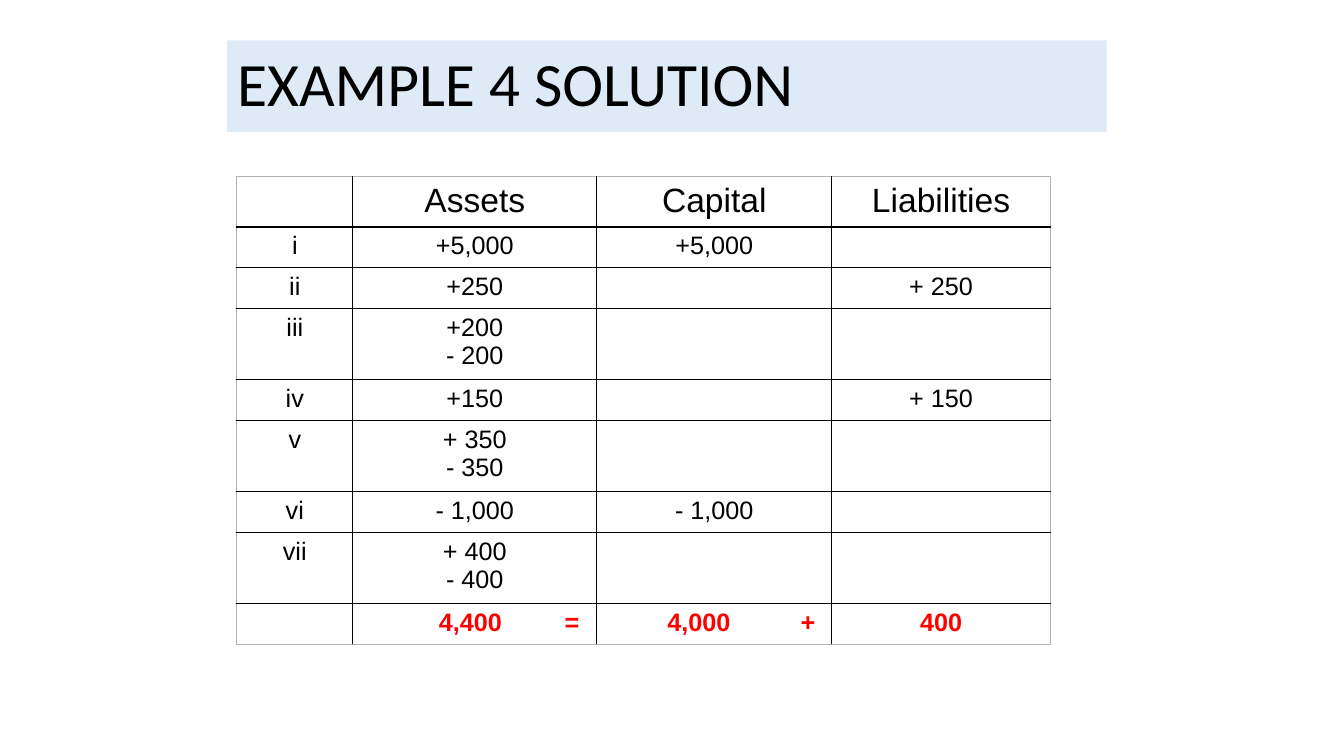
import pptx
import pptx.dml.color
import pptx.enum.text
import pptx.oxml
import pptx.oxml.ns
import pptx.util

Cm, Pt = pptx.util.Cm, pptx.util.Pt
RGBColor = pptx.dml.color.RGBColor
Align = pptx.enum.text.PP_ALIGN

BLACK = RGBColor(0, 0, 0)
RED = RGBColor(0xFF, 0, 0)
GREY = RGBColor(0xB2, 0xB2, 0xB2)
PALE = RGBColor(0xDE, 0xEB, 0xF7)

COLS = [2.92, 6.15, 5.92, 5.51]
SINGLE, DOUBLE, HEAD = 1.03, 1.79, 1.27
ROWS = [
    ["", "Assets", "Capital", "Liabilities"],
    ["i", "+5,000", "+5,000", ""],
    ["ii", "+250", "", "+ 250"],
    ["iii", "+200\n- 200", "", ""],
    ["iv", "+150", "", "+ 150"],
    ["v", "+ 350\n- 350", "", ""],
    ["vi", "- 1,000", "- 1,000", ""],
    ["vii", "+ 400\n- 400", "", ""],
    ["", "\t4,400\t=", "\t4,000\t+", "400"],
]
# Centre tabs of the totals: figure, then sign
TABS = {1: (2.71, 5.27), 2: (2.32, 5.07)}


class Deck:
    def __init__(self):
        self.prs = pptx.Presentation()
        self.prs.slide_width, self.prs.slide_height = Cm(33.87), Cm(19.05)
        self.slide = self.prs.slides.add_slide(self.prs.slide_layouts[5])

    def style(self, para, name, size, color=BLACK, bold=False):
        font = para.font
        font.name, font.size, font.bold = name, Pt(size), bold
        font.color.rgb = color

    def title(self, text, left, top, width, height):
        box = self.slide.shapes.title
        box.left, box.top = Cm(left), Cm(top)
        box.width, box.height = Cm(width), Cm(height)
        box.fill.solid()
        box.fill.fore_color.rgb = PALE
        frame = box.text_frame
        frame.text = text
        frame.vertical_anchor = pptx.enum.text.MSO_ANCHOR.MIDDLE
        para = frame.paragraphs[0]
        para.alignment, para.line_spacing = Align.LEFT, 0.9
        self.style(para, "Calibri", 44)

    def border(self, cell, side, color):
        line = pptx.oxml.parse_xml(
            f'<a:ln{side} {pptx.oxml.ns.nsdecls("a")} w="{Pt(1)}"><a:solidFill>'
            f'<a:srgbClr val="{color}"/></a:solidFill></a:ln{side}>')
        cell._tc.get_or_add_tcPr().append(line)

    def tabs(self, para, stops):
        props = para._p.get_or_add_pPr()
        marks = "".join(f'<a:tab pos="{Cm(x)}" algn="ctr"/>' for x in stops)
        props.append(pptx.oxml.parse_xml(
            f'<a:tabLst {pptx.oxml.ns.nsdecls("a")}>{marks}</a:tabLst>'))

    def table(self, rows, cols, left, top):
        highs = [HEAD] + [DOUBLE if "\n" in row[1] else SINGLE for row in rows[1:]]
        grid = self.slide.shapes.add_table(
            len(rows), len(cols), Cm(left), Cm(top),
            Cm(sum(cols)), Cm(sum(highs))).table
        grid.first_row = grid.horz_banding = False
        for col, width in zip(grid.columns, cols):
            col.width = Cm(width)
        for row, high in zip(grid.rows, highs):
            row.height = Cm(high)
        end, last = len(rows) - 1, len(cols) - 1
        for r, row in enumerate(rows):
            for c, text in enumerate(row):
                cell = grid.cell(r, c)
                # Grey outer frame, black inner lines
                edges = {"L": c == 0, "R": c == last, "T": r == 0, "B": r == end}
                for side, outer in edges.items():
                    self.border(cell, side, GREY if outer else BLACK)
                cell.fill.background()
                cell.text = text
                total = r == end
                for para in cell.text_frame.paragraphs:
                    para.alignment = Align.CENTER
                    if total and c in TABS:
                        para.alignment = Align.LEFT
                        self.tabs(para, TABS[c])
                    self.style(para, "Arial", 18 if r else 24,
                               RED if total else BLACK, total)


def main():
    deck = Deck()
    # Heading
    deck.title("EXAMPLE 4 SOLUTION", 5.72, 1.02, 22.17, 2.31)
    # Accounting equation
    deck.table(ROWS, COLS, 5.97, 4.45)
    deck.prs.save("out.pptx")


if __name__ == "__main__":
    main()
